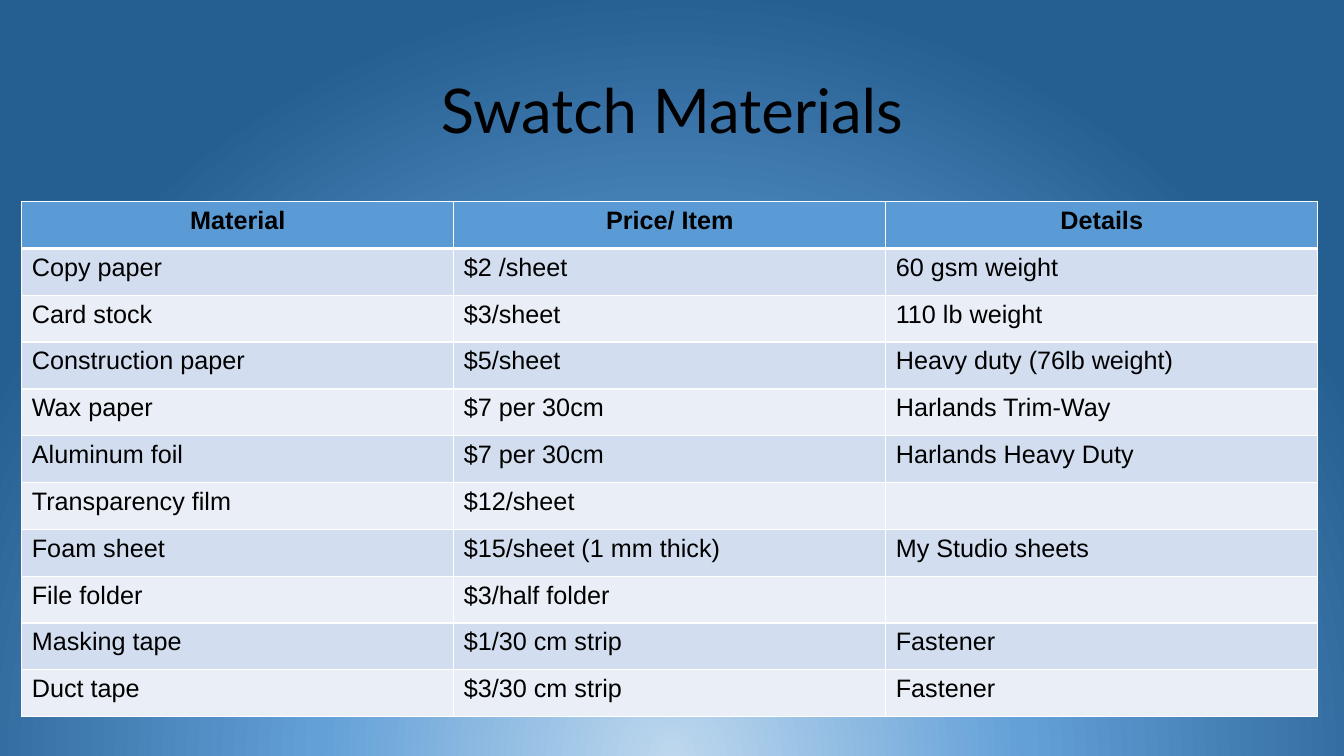
from pptx import Presentation
from pptx.dml.color import RGBColor
from pptx.enum.text import MSO_ANCHOR, PP_ALIGN
from pptx.oxml import parse_xml
from pptx.oxml.ns import nsdecls
from pptx.util import Cm, Pt

CENTER, LEFT = PP_ALIGN.CENTER, PP_ALIGN.LEFT
MIDDLE = MSO_ANCHOR.MIDDLE
TITLE_ONLY = 5

BLACK = RGBColor(0x00, 0x00, 0x00)
WHITE = RGBColor(0xFF, 0xFF, 0xFF)
HEADER_BLUE = RGBColor(0x5B, 0x9B, 0xD5)
BAND_DARK = RGBColor(0xD2, 0xDE, 0xEF)
BAND_LIGHT = RGBColor(0xEA, 0xEF, 0xF7)
GLOW_STOPS = [
    (0, RGBColor(0xBD, 0xD7, 0xEE)),
    (46, RGBColor(0x63, 0xA0, 0xD7)),
    (100, RGBColor(0x25, 0x5E, 0x91)),
]

MATERIALS = [
    ("Material", "Price/ Item", "Details"),
    ("Copy paper", "$2 /sheet", "60 gsm weight"),
    ("Card stock", "$3/sheet", "110 lb weight"),
    ("Construction paper", "$5/sheet", "Heavy duty (76lb weight)"),
    ("Wax paper", "$7 per 30cm", "Harlands Trim-Way"),
    ("Aluminum foil", "$7 per 30cm", "Harlands Heavy Duty"),
    ("Transparency film", "$12/sheet", ""),
    ("Foam sheet", "$15/sheet (1 mm thick)", "My Studio sheets"),
    ("File folder", "$3/half folder", ""),
    ("Masking tape", "$1/30 cm strip", "Fastener"),
    ("Duct tape", "$3/30 cm strip", "Fastener"),
]


def add_run(paragraph, text, font_name, size, bold=False):
    run = paragraph.add_run()
    run.text = text
    run.font.name = font_name
    run.font.size = Pt(size)
    run.font.bold = bold
    run.font.color.rgb = BLACK


def paint_background(slide):
    stops = "".join(
        f'<a:gs pos="{position * 1000}"><a:srgbClr val="{color}"/></a:gs>'
        for position, color in GLOW_STOPS
    )
    background = parse_xml(
        f'<p:bg {nsdecls("p", "a")}><p:bgPr><a:gradFill rotWithShape="1">'
        f'<a:gsLst>{stops}</a:gsLst><a:path path="circle">'
        '<a:fillToRect l="50000" t="130000" r="50000" b="-30000"/></a:path>'
        '</a:gradFill><a:effectLst/></p:bgPr></p:bg>'
    )
    slide.element.cSld.insert(0, background)


def place_title(slide, left, top, width, height):
    title = slide.shapes.title
    title.left, title.top, title.width, title.height = left, top, width, height
    title.text_frame.vertical_anchor = MIDDLE
    paragraph = title.text_frame.paragraphs[0]
    paragraph.alignment = CENTER
    paragraph.line_spacing = 0.9
    add_run(paragraph, "Swatch Materials", "Lato", 44)


def set_borders(cell, widths):
    properties = cell._tc.get_or_add_tcPr()
    for side, width in widths.items():
        properties.append(parse_xml(
            f'<a:ln{side} {nsdecls("a")} w="{Pt(width)}"><a:solidFill>'
            f'<a:srgbClr val="{WHITE}"/></a:solidFill></a:ln{side}>'
        ))


def format_cell(cell, text, row_index):
    is_header = row_index == 0
    set_borders(cell, {
        "L": 1,
        "R": 1,
        "T": 3 if row_index == 1 else 1,
        "B": 3 if is_header else 1,
    })
    cell.fill.solid()
    band = BAND_DARK if row_index % 2 else BAND_LIGHT
    cell.fill.fore_color.rgb = HEADER_BLUE if is_header else band
    paragraph = cell.text_frame.paragraphs[0]
    paragraph.alignment = CENTER if is_header else LEFT
    if text:
        add_run(paragraph, text, "Arial", 18, is_header)


def add_materials_table(slide, left, top, width, height):
    row_count, column_count = len(MATERIALS), len(MATERIALS[0])
    table = slide.shapes.add_table(
        row_count, column_count, left, top, width, height
    ).table
    for row_index, texts in enumerate(MATERIALS):
        for column_index, text in enumerate(texts):
            format_cell(table.cell(row_index, column_index), text, row_index)


def main():
    presentation = Presentation()
    presentation.slide_width = Cm(33.87)
    presentation.slide_height = Cm(19.05)
    slide = presentation.slides.add_slide(presentation.slide_layouts[TITLE_ONLY])
    paint_background(slide)
    place_title(slide, Cm(2.33), Cm(1.01), Cm(29.21), Cm(3.68))
    add_materials_table(slide, Cm(0.55), Cm(5.08), Cm(32.66), Cm(12.98))
    presentation.save("out.pptx")


if __name__ == "__main__":
    main()
